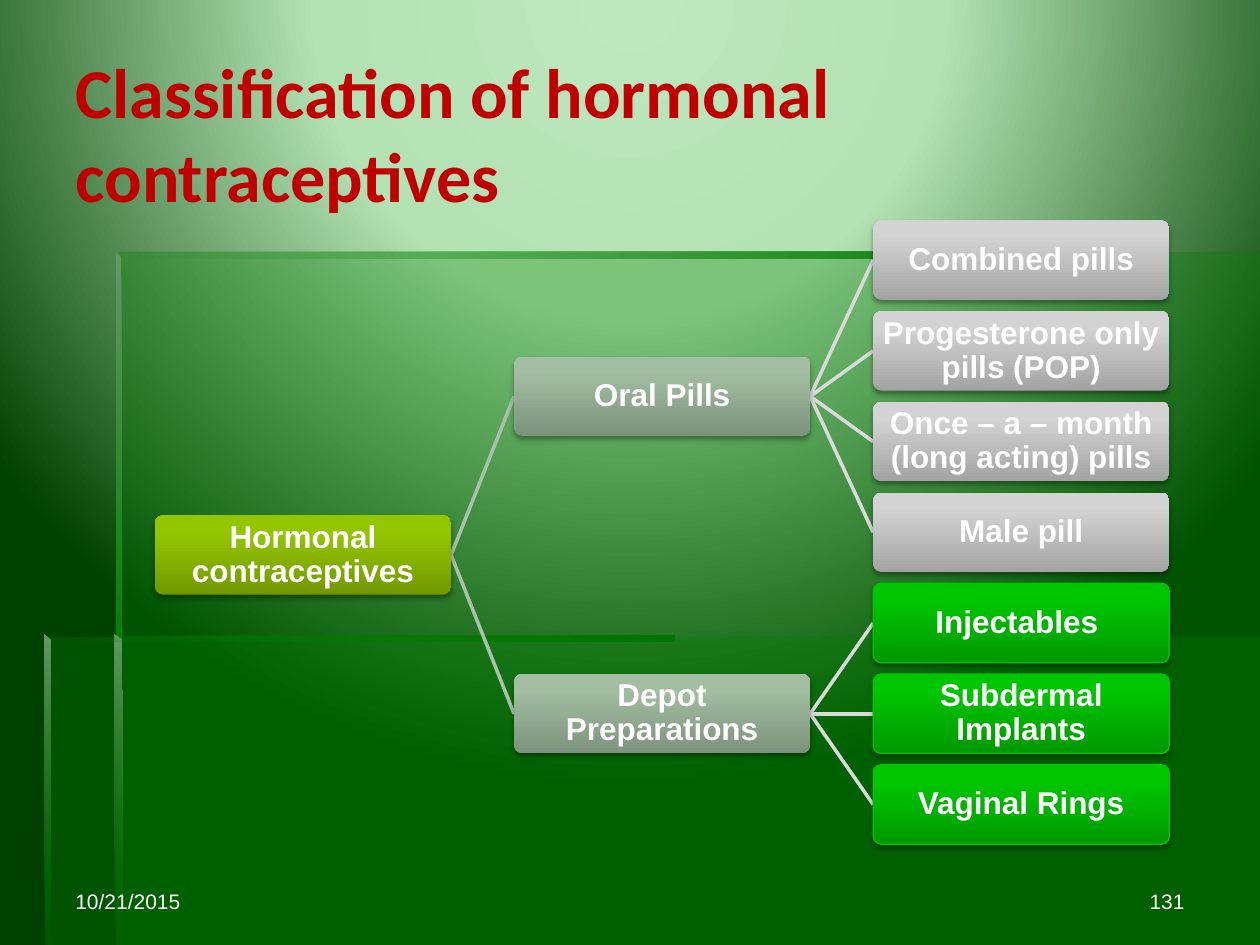
from dataclasses import dataclass, field
from typing import NamedTuple

from lxml.etree import SubElement
from pptx import Presentation
from pptx.dml.color import RGBColor
from pptx.enum.shapes import MSO_CONNECTOR, MSO_SHAPE
from pptx.enum.text import MSO_ANCHOR, MSO_AUTO_SIZE, PP_ALIGN
from pptx.oxml.ns import qn
from pptx.util import Inches, Pt

WHITE = RGBColor(0xFF, 0xFF, 0xFF)
BLACK = RGBColor(0, 0, 0)
RED = RGBColor(0xC0, 0, 0)
GREEN = RGBColor(0, 0x80, 0)
DEEP_GREEN = RGBColor(0, 0x75, 0)
EDGE_GREEN = RGBColor(0x66, 0x97, 0x66)
BRIGHT_GREEN = RGBColor(0, 0xC8, 0)
SAGE = RGBColor(0xAA, 0xC0, 0xAA)
SILVER = RGBColor(0xDA, 0xDA, 0xDA)

# Tree grid in inches
LEFT, TOP = 1.23, 1.75
BOX_W, BOX_H = 2.35, 0.63
COL, ROW = 2.85, 0.72


class Stop(NamedTuple):
    pos: int
    color: RGBColor
    alpha: int = 100


@dataclass
class Band:
    points: list
    stops: list
    angle: int = 0


@dataclass
class Look:
    stops: list
    outline: RGBColor | None = None


@dataclass
class Node:
    text: str
    look: Look
    link: RGBColor | None = None
    children: list = field(default_factory=list)
    row: float = 0


def shades(*colors: RGBColor) -> list:
    return [Stop(pos, c) for pos, c in zip((0, 80, 100), colors)]


OLIVE_LOOK = Look(shades(RGBColor(0x72, 0x98, 0), RGBColor(0x94, 0xC6, 0),
                         RGBColor(0x95, 0xC7, 0)))
SAGE_LOOK = Look(shades(RGBColor(0x7C, 0x92, 0x7C), RGBColor(0xA2, 0xBD, 0xA2),
                        RGBColor(0xA2, 0xBF, 0xA2)))
GREY_LOOK = Look(shades(RGBColor(0xA3, 0xA3, 0xA3), RGBColor(0xD3, 0xD3, 0xD3),
                        RGBColor(0xD4, 0xD4, 0xD4)))
GREEN_LOOK = Look(shades(RGBColor(0, 0x98, 0), RGBColor(0, 0xC6, 0),
                         RGBColor(0, 0xC7, 0)), BRIGHT_GREEN)

BACKDROP = [Stop(0, RGBColor(0xBE, 0xE7, 0xBE)), Stop(40, RGBColor(0xB3, 0xE2, 0xB3)),
            Stop(100, RGBColor(0, 0x40, 0))]
VEIL = [Stop(0, GREEN, 30), Stop(100, GREEN, 30)]
FADE_IN = [Stop(0, GREEN, 0), Stop(100, DEEP_GREEN)]

BANDS = [
    Band([(0.92, 5.05), (0.92, 7.5), (10, 7.5), (10, 5.05)], VEIL),
    Band([(0.94, 5.06), (0.36, 5.06), (0.36, 7.5), (10, 7.5), (10, 2), (0.94, 2)], VEIL),
    Band([(0.92, 2), (0.92, 2.05), (8.91, 2.05), (8.91, 2)], FADE_IN),
    Band([(0.92, 2), (0.92, 5.1), (0.97, 5.1), (0.96, 2.04)],
         [Stop(0, EDGE_GREEN), Stop(100, GREEN)], 90),
    Band([(0.91, 7.5), (0.97, 7.5), (0.96, 5.08), (0.91, 5.04)],
         [Stop(0, EDGE_GREEN), Stop(100, GREEN, 0)], 90),
    Band([(0.35, 5.04), (0.35, 5.09), (5.35, 5.09), (5.35, 5.04)], FADE_IN),
    Band([(0.35, 5.04), (0.35, 7.5), (0.4, 7.5), (0.4, 5.09)],
         [Stop(0, EDGE_GREEN), Stop(100, GREEN, 10)], 90),
]

TREE = Node("Hormonal contraceptives", OLIVE_LOOK, SAGE, [
    Node("Oral Pills", SAGE_LOOK, SILVER, [
        Node(t, GREY_LOOK) for t in (
            "Combined pills", "Progesterone only pills (POP)",
            "Once – a – month (long acting) pills", "Male pill")]),
    Node("Depot Preparations", SAGE_LOOK, SILVER, [
        Node(t, GREEN_LOOK) for t in (
            "Injectables ", "Subdermal Implants", "Vaginal Rings")]),
])


def add_color(parent, color: RGBColor, alpha: int) -> None:
    clr = SubElement(parent, qn("a:srgbClr"), val=str(color))
    if alpha < 100:
        SubElement(clr, qn("a:alpha"), val=str(alpha * 1000))


def set_gradient(fill, props, stops: list, angle: int | None) -> None:
    """Fill with a linear gradient, or a circular one when angle is None."""
    fill.solid()
    solid = props.find(qn("a:solidFill"))
    grad = SubElement(props, qn("a:gradFill"), rotWithShape="1")
    props.replace(solid, grad)
    gs_list = SubElement(grad, qn("a:gsLst"))
    for stop in stops:
        gs = SubElement(gs_list, qn("a:gs"), pos=str(stop.pos * 1000))
        add_color(gs, stop.color, stop.alpha)
    if angle is None:
        circle = SubElement(grad, qn("a:path"), path="circle")
        SubElement(circle, qn("a:fillToRect"), l="50000", t="-80000",
                   r="50000", b="180000")
    else:
        SubElement(grad, qn("a:lin"), ang=str(angle * 60000), scaled="0")


def add_band(s, band: Band) -> None:
    pts = [(Inches(x), Inches(y)) for x, y in band.points]
    builder = s.shapes.build_freeform(*pts[0])
    builder.add_line_segments(pts[1:], close=True)
    sp = builder.convert_to_shape()
    sp.shadow.inherit = False
    sp.line.fill.background()
    set_gradient(sp.fill, sp.element.spPr, band.stops, band.angle)


def write(sp, text: str, size: int, color: RGBColor, align=PP_ALIGN.LEFT,
          font: str = "Arial", bold: bool = False):
    tf = sp.text_frame
    tf.text = text
    tf.word_wrap = True
    tf.auto_size = MSO_AUTO_SIZE.NONE
    tf.vertical_anchor = MSO_ANCHOR.MIDDLE
    p = tf.paragraphs[0]
    p.alignment = align
    f = p.runs[0].font
    f.name, f.size, f.bold, f.color.rgb = font, Pt(size), bold, color
    return tf


def add_link(s, col: int, start: Node, end: Node) -> None:
    x = LEFT + col * COL + BOX_W
    y1, y2 = (TOP + n.row * ROW + BOX_H / 2 for n in (start, end))
    cx = s.shapes.add_connector(MSO_CONNECTOR.STRAIGHT, Inches(x), Inches(y1),
                                Inches(x + COL - BOX_W), Inches(y2))
    cx.line.color.rgb = start.link
    cx.line.width = Pt(2)
    SubElement(cx.element.spPr, qn("a:effectLst"))


def add_box(s, col: int, node: Node) -> None:
    sp = s.shapes.add_shape(MSO_SHAPE.ROUNDED_RECTANGLE, Inches(LEFT + col * COL),
                            Inches(TOP + node.row * ROW), Inches(BOX_W), Inches(BOX_H))
    sp.adjustments[0] = 0.1
    set_gradient(sp.fill, sp.element.spPr, node.look.stops, 270)
    if node.look.outline is None:
        sp.line.fill.background()
    else:
        sp.line.color.rgb = node.look.outline
        sp.line.width = Pt(0.75)
    sp.shadow.inherit = False
    shadow = SubElement(sp.element.spPr.find(qn("a:effectLst")), qn("a:outerShdw"),
                        blurRad=str(Pt(3.1)), dist=str(Pt(1.8)), dir="5400000",
                        rotWithShape="0")
    add_color(shadow, BLACK, 35)
    tf = write(sp, node.text, 18, WHITE, PP_ALIGN.CENTER, bold=True)
    tf.margin_left = tf.margin_right = tf.margin_top = tf.margin_bottom = Inches(0.01)
    tf.paragraphs[0].line_spacing = 0.9


def place(node: Node, next_row: int = 0) -> int:
    """Give leaves successive rows and centre each parent on its children."""
    if not node.children:
        node.row = next_row
        return next_row + 1
    for child in node.children:
        next_row = place(child, next_row)
    node.row = (node.children[0].row + node.children[-1].row) / 2
    return next_row


def draw(s, node: Node, col: int = 0) -> None:
    for child in node.children:
        add_link(s, col, node, child)
        draw(s, child, col + 1)
    add_box(s, col, node)


def main() -> None:
    prs = Presentation()
    prs.slide_width, prs.slide_height = Inches(10), Inches(7.5)
    s = prs.slides.add_slide(prs.slide_layouts[5])

    # Background and decorative bands
    fill = s.background.fill
    fill.solid()
    set_gradient(fill, s.element.find(".//" + qn("p:bgPr")), BACKDROP, None)
    for band in BANDS:
        add_band(s, band)

    # Title
    title = s.shapes.title
    title.left, title.top = Inches(0.5), Inches(0.27)
    title.width, title.height = Inches(9.17), Inches(1.57)
    write(title, "Classification of hormonal contraceptives", 40, RED,
          font="Calibri", bold=True)

    # Classification tree
    place(TREE)
    draw(s, TREE)

    # Date and slide number
    for x, text, align in ((0.5, "10/21/2015", PP_ALIGN.LEFT), (7.17, "131", PP_ALIGN.RIGHT)):
        box = s.shapes.add_textbox(Inches(x), Inches(6.95), Inches(2.33), Inches(0.4))
        write(box, text, 12, WHITE, align)

    prs.save("out.pptx")


if __name__ == "__main__":
    main()
